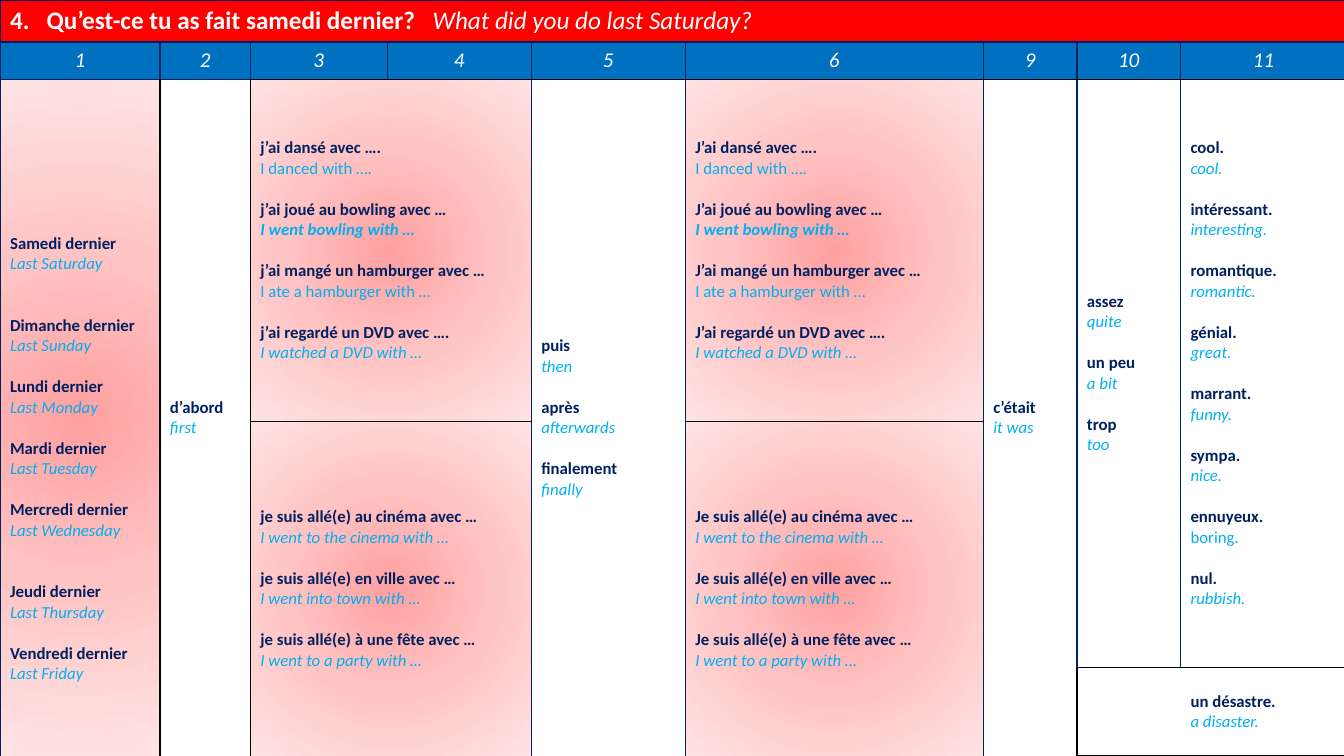
from pptx import Presentation
from pptx.dml.color import RGBColor
from pptx.enum.text import MSO_ANCHOR, PP_ALIGN
from pptx.oxml import parse_xml
from pptx.oxml.ns import nsdecls
from pptx.util import Cm, Pt

MIDDLE = MSO_ANCHOR.MIDDLE
CENTER = PP_ALIGN.CENTER
RED = RGBColor(0xFF, 0x00, 0x00)
BLUE = RGBColor(0x00, 0x70, 0xC0)
NAVY = RGBColor(0x00, 0x20, 0x60)
SKY = RGBColor(0x00, 0xB0, 0xF0)
WHITE = RGBColor(0xFF, 0xFF, 0xFF)
BLACK = RGBColor(0x00, 0x00, 0x00)
ROSE = [(0, RGBColor(0xFF, 0xA0, 0xA0)), (50, RGBColor(0xFF, 0xC5, 0xC5)),
        (100, RGBColor(0xFF, 0xE3, 0xE3))]
FONT = "Calibri"
LINE = 14.65  # height in points of one 12 pt line

WIDTHS = [4.03, 2.28, 3.45, 3.63, 3.88, 7.51, 2.36, 2.61, 4.18]
HEIGHTS = [1.06, 0.94, 8.62, 6.2, 2.23]
HEADS = ["1", "2", "3", "4", "5", "6", "9", "10", "11"]

DAYS = [
    ("Samedi dernier", "Last Saturday"),
    ("Dimanche dernier", "Last Sunday"),
    ("Lundi dernier", "Last Monday"),
    ("Mardi dernier", "Last Tuesday"),
    ("Mercredi dernier", "Last Wednesday"),
    ("Jeudi dernier", "Last Thursday"),
    ("Vendredi dernier", "Last Friday"),
]
AVOIR = [
    ("j’ai dansé avec ….", "I danced with …."),
    ("j’ai joué au bowling avec …", "I went bowling with …"),
    ("j’ai mangé un hamburger avec …", "I ate a hamburger with …"),
    ("j’ai regardé un DVD avec ….", "I watched a DVD with …"),
]
ETRE = [
    ("je suis allé(e) au cinéma avec …", "I went to the cinema with …"),
    ("je suis allé(e) en ville avec …", "I went into town with …"),
    ("je suis allé(e) à une fête avec …", "I went to a party with …"),
]
ORDER = [("puis", "then"), ("après", "afterwards"), ("finalement", "finally")]
DEGREE = [("assez", "quite"), ("un peu", "a bit"), ("trop", "too")]
VIEWS = [
    ("cool.", "cool."),
    ("intéressant.", "interesting."),
    ("romantique.", "romantic."),
    ("génial.", "great."),
    ("marrant.", "funny."),
    ("sympa.", "nice."),
    ("ennuyeux.", "boring."),
    ("nul.", "rubbish."),
]
UPRIGHT = {"I danced with ….", "I ate a hamburger with …", "boring."}
STRONG = {"I went bowling with …"}
SPACED = {"Dimanche dernier", "Jeudi dernier"}

# row, column, rows, columns, rose fill, phrases
BLOCKS = [
    (2, 0, 3, 1, True, DAYS),
    (2, 1, 3, 1, False, [("d’abord", "first")]),
    (2, 2, 1, 2, True, AVOIR),
    (3, 2, 2, 2, True, ETRE),
    (2, 4, 3, 1, False, ORDER),
    (2, 5, 1, 1, True, [(fr.capitalize().replace("dvd", "DVD"), en) for fr, en in AVOIR]),
    (3, 5, 2, 1, True, [(fr.capitalize(), en) for fr, en in ETRE]),
    (2, 6, 3, 1, False, [("c’était", "it was")]),
    (2, 7, 2, 1, False, DEGREE),
    (2, 8, 2, 1, False, VIEWS),
    (4, 7, 1, 1, False, []),
    (4, 8, 1, 1, False, [("un désastre.", "a disaster.")]),
]


def outline(row, col, rows, cols, edges):
    """Merge a block and line its outer sides; edges maps L, R, T, B to colours."""
    for r in range(row, row + rows):
        for c in range(col, col + cols):
            outer = {"L": c == col, "R": c == col + cols - 1,
                     "T": r == row, "B": r == row + rows - 1}
            props = table.cell(r, c)._tc.get_or_add_tcPr()
            for side, shown in outer.items():
                color = edges.get(side) if shown else None
                paint = (f'<a:solidFill><a:srgbClr val="{color}"/></a:solidFill>'
                         if color is not None else "<a:noFill/>")
                props.append(parse_xml(
                    f'<a:ln{side} {nsdecls("a")} w="12700">{paint}</a:ln{side}>'))
    if rows * cols > 1:
        table.cell(row, col).merge(table.cell(row + rows - 1, col + cols - 1))
    return table.cell(row, col)


def tint(cell, color):
    cell.fill.solid()
    cell.fill.fore_color.rgb = color


deck = Presentation()
deck.slide_width, deck.slide_height = Cm(33.87), Cm(19.05)
slide = deck.slides.add_slide(deck.slide_layouts[6])
table = slide.shapes.add_table(len(HEIGHTS), len(WIDTHS), 0, 0,
                               Cm(sum(WIDTHS)), Cm(sum(HEIGHTS))).table
table.first_row = table.horz_banding = False
for column, width in zip(table.columns, WIDTHS):
    column.width = Cm(width)
for band, height in zip(table.rows, HEIGHTS):
    band.height = Cm(height)

# Question
title = outline(0, 0, 1, len(WIDTHS), dict.fromkeys("LRTB", NAVY))
tint(title, RED)
para = title.text_frame.paragraphs[0]
para.font.name, para.font.size = FONT, Pt(18)
para.font.color.rgb = WHITE
french = para.add_run()
french.text = "4.   Qu’est-ce tu as fait samedi dernier?   "
french.font.bold = True
english = para.add_run()
english.text = "What did you do last Saturday?"
english.font.italic = True

# Column numbers
for col, head in enumerate(HEADS):
    cell = outline(1, col, 1, 1, dict.fromkeys("LRTB", NAVY))
    tint(cell, BLUE)
    cell.text = head
    para = cell.text_frame.paragraphs[0]
    para.alignment = CENTER
    para.font.name, para.font.size = FONT, Pt(15)
    para.font.italic = True
    para.font.color.rgb = WHITE

# Phrases
for row, col, rows, cols, rose, pairs in BLOCKS:
    edges = {"L": BLACK if col in (1, 2) else NAVY,
             "R": BLACK if col in (0, 1) else NAVY,
             "T": NAVY if col < 2 else BLACK,
             "B": NAVY if col < 2 else BLACK}
    if row == 4:
        side = "L" if col == 7 else "R"
        edges = dict.fromkeys(side + "TB", BLACK)
    cell = outline(row, col, rows, cols, edges)
    cell.vertical_anchor = MIDDLE
    if rose:
        stops = "".join(f'<a:gs pos="{pos * 1000}"><a:srgbClr val="{color}"/></a:gs>'
                        for pos, color in ROSE)
        cell._tc.tcPr.append(parse_xml(
            f'<a:gradFill {nsdecls("a")}><a:gsLst>{stops}</a:gsLst><a:path path="circle">'
            '<a:fillToRect l="50000" t="50000" r="50000" b="50000"/></a:path></a:gradFill>'))
    else:
        tint(cell, WHITE)
    if pairs is DAYS:
        cell.margin_top = Cm(2.19)
    cell.text = "\n".join(text for pair in pairs for text in pair)
    for i, para in enumerate(cell.text_frame.paragraphs):
        text, is_french = para.text, i % 2 == 0
        para.font.name, para.font.size = FONT, Pt(12)
        para.font.bold = is_french or text in STRONG
        para.font.italic = not is_french and text not in UPRIGHT
        para.font.color.rgb = NAVY if is_french else SKY
        if is_french and i:
            para.space_before = Pt(LINE * (2 if text in SPACED else 1))

deck.save("out.pptx")
